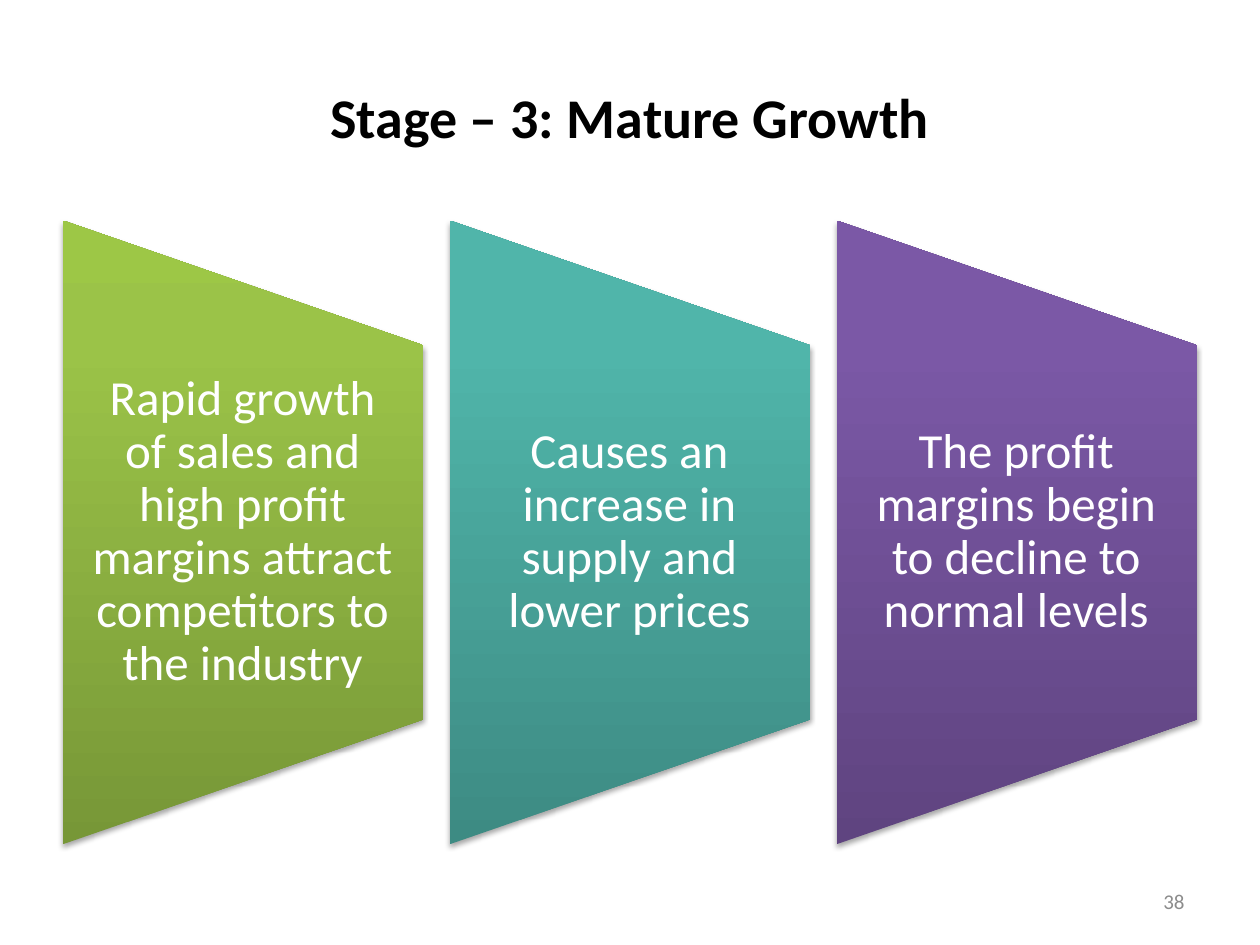
import pptx
import pptx.util
import pptx.oxml
import pptx.oxml.ns
from pptx.dml.color import RGBColor
from pptx.enum.shapes import MSO_SHAPE
from pptx.enum.text import MSO_ANCHOR, PP_ALIGN

TITLE = "Stage – 3: Mature Growth"
PAGE_NUMBER = "38"
# text, gradient colours from bottom to top
PANELS = [
    ("Rapid growth of sales and high profit margins attract competitors to the industry",
     ("779737", "9BC348", "9DC746")),
    ("Causes an increase in supply and lower prices",
     ("3D8B83", "50B5AA", "4EB8AC")),
    ("The profit margins begin to decline to normal levels",
     ("5F4480", "7B58A6", "7C57A8")),
]
STOPS = (0, 80, 100)

SLIDE_W, SLIDE_H = 10, 7.5
MARGIN = 0.5
GAP = 0.21
PANEL_W = (SLIDE_W - 2 * MARGIN - GAP * (len(PANELS) - 1)) / len(PANELS)
PANEL_TOP, PANEL_H = 1.75, 4.95
TEXT_H = PANEL_H * 0.6


def inches(*lengths):
    return [pptx.util.Inches(x) for x in lengths]


def set_text(shape, text, size, color, align, bold=False):
    tf = shape.text_frame
    tf.word_wrap = True
    tf.vertical_anchor = MSO_ANCHOR.MIDDLE
    p = tf.paragraphs[0]
    p.alignment = align
    r = p.add_run()
    r.text = text
    r.font.name = "Calibri"
    r.font.size = pptx.util.Pt(size)
    r.font.bold = bold
    r.font.color.rgb = RGBColor.from_string(color)
    return tf


def paint(sp, colors):
    """Fill upwards with a gradient that stays upright, over a soft shadow."""
    sp.line.fill.background()
    sp.fill.background()
    sp.shadow.inherit = False
    ns = pptx.oxml.ns.nsdecls("a")
    stops = "".join(
        f'<a:gs pos="{pos * 1000}"><a:srgbClr val="{color}"/></a:gs>'
        for pos, color in zip(STOPS, colors))
    gradient = (f'<a:gradFill {ns} rotWithShape="0"><a:gsLst>{stops}</a:gsLst>'
                '<a:lin ang="16200000" scaled="0"/></a:gradFill>')
    shadow = (f'<a:effectLst {ns}><a:outerShdw blurRad="{pptx.util.Pt(3.1)}" '
              f'dist="{pptx.util.Pt(1.8)}" dir="5400000" rotWithShape="0">'
              '<a:srgbClr val="000000"><a:alpha val="35000"/></a:srgbClr>'
              '</a:outerShdw></a:effectLst>')
    props = sp._element.spPr
    for tag, xml in (("a:noFill", gradient), ("a:effectLst", shadow)):
        old = props.find(pptx.oxml.ns.qn(tag))
        props.replace(old, pptx.oxml.parse_xml(xml))


def add_panel(slide, left, text, colors):
    center_x, center_y = left + PANEL_W / 2, PANEL_TOP + PANEL_H / 2
    # Turned a quarter, so the shape's width is the panel's height
    sp = slide.shapes.add_shape(
        MSO_SHAPE.FLOWCHART_MANUAL_OPERATION,
        *inches(center_x - PANEL_H / 2, center_y - PANEL_W / 2, PANEL_H, PANEL_W))
    sp.rotation = 270
    paint(sp, colors)

    box = slide.shapes.add_textbox(
        *inches(left, center_y - TEXT_H / 2, PANEL_W, TEXT_H))
    tf = set_text(box, text, 28, "FFFFFF", PP_ALIGN.CENTER)
    tf.margin_left, tf.margin_right = inches(0.19, 0.2)
    tf.margin_top = tf.margin_bottom = 0
    tf.paragraphs[0].line_spacing = 0.9


def main():
    prs = pptx.Presentation()
    prs.slide_width, prs.slide_height = inches(SLIDE_W, SLIDE_H)
    slide = prs.slides.add_slide(prs.slide_layouts[5])

    title = slide.shapes.title
    title.left, title.top, title.width, title.height = inches(
        MARGIN, 0.3, SLIDE_W - 2 * MARGIN, 1.25)
    set_text(title, TITLE, 32, "000000", PP_ALIGN.CENTER, bold=True)

    for i, (text, colors) in enumerate(PANELS):
        add_panel(slide, MARGIN + i * (PANEL_W + GAP), text, colors)

    number_w = 2.33
    number = slide.shapes.add_textbox(
        *inches(SLIDE_W - MARGIN - number_w, 6.95, number_w, 0.4))
    set_text(number, PAGE_NUMBER, 12, "8C8C8C", PP_ALIGN.RIGHT)

    prs.save("out.pptx")


if __name__ == "__main__":
    main()
